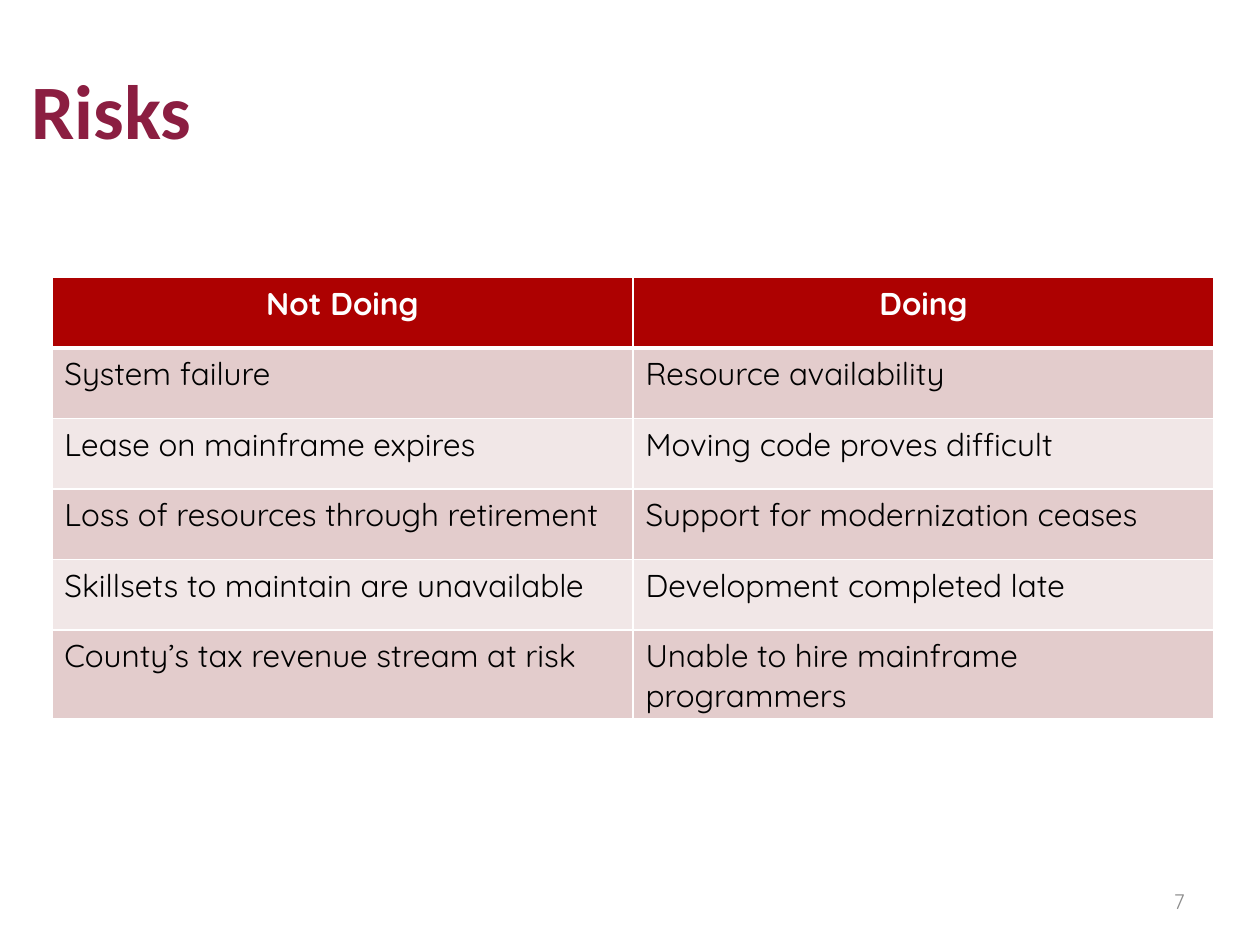
from dataclasses import dataclass

from lxml.etree import SubElement
from pptx import Presentation
from pptx.dml.color import RGBColor as Color
from pptx.enum.text import MSO_ANCHOR as Anchor, PP_ALIGN as Align
from pptx.oxml.ns import qn
from pptx.util import Pt


@dataclass(frozen=True)
class Theme:
    title: str = "8B1E41"
    header: str = "AD0101"
    bands: tuple = ("E3CCCC", "F1E7E7")
    white: str = "FFFFFF"
    black: str = "000000"
    muted: str = "8C8C8C"
    title_font: str = "Calibri"
    body_font: str = "Quicksand"
    title_size: int = 44
    body_size: int = 18
    number_size: int = 12


THEME = Theme()

RISKS = [
    ("Not Doing", "Doing"),
    ("System failure", "Resource availability"),
    ("Lease on mainframe expires", "Moving code proves difficult"),
    ("Loss of resources through retirement", "Support for modernization ceases"),
    ("Skillsets to maintain are unavailable", "Development completed late"),
    ("County’s tax revenue stream at risk", "Unable to hire mainframe programmers"),
]


def style_paragraph(paragraph, font_name, size, color, bold=False, align=Align.LEFT):
    paragraph.alignment = align
    font = paragraph.font
    font.name = font_name
    font.size = Pt(size)
    font.bold = bold
    font.color.rgb = Color.from_string(color)


def add_text(slide, box, text, anchor, inset=None, **style):
    shape = slide.shapes.add_textbox(*map(Pt, box))
    frame = shape.text_frame
    frame.word_wrap = True
    frame.vertical_anchor = anchor
    if inset is not None:
        frame.margin_left = frame.margin_right = Pt(inset)
        frame.margin_top = frame.margin_bottom = Pt(inset)
    frame.text = text
    style_paragraph(frame.paragraphs[0], **style)


def set_borders(cell, **widths):
    properties = cell._tc.get_or_add_tcPr()
    for side in "LRTB":
        width = Pt(widths.get(side, 1))
        line = SubElement(properties, qn(f"a:ln{side}"), w=str(width))
        fill = SubElement(line, qn("a:solidFill"))
        SubElement(fill, qn("a:srgbClr"), val=THEME.white)


def fill_cell(cell, text, row):
    is_header = row == 0
    set_borders(cell, T=3 if row == 1 else 1, B=3 if is_header else 1)
    background = THEME.header if is_header else THEME.bands[(row - 1) % 2]
    cell.fill.solid()
    cell.fill.fore_color.rgb = Color.from_string(background)
    cell.text = text
    style_paragraph(
        cell.text_frame.paragraphs[0],
        font_name=THEME.body_font,
        size=THEME.body_size,
        color=THEME.white if is_header else THEME.black,
        bold=is_header,
        align=Align.CENTER if is_header else Align.LEFT,
    )


def add_risk_table(slide, left, top, column_width, row_height):
    columns = len(RISKS[0])
    table = slide.shapes.add_table(
        len(RISKS), columns, Pt(left), Pt(top),
        Pt(column_width * columns), Pt(row_height * len(RISKS)),
    ).table
    for row, texts in enumerate(RISKS):
        for column, text in enumerate(texts):
            fill_cell(table.cell(row, column), text, row)


def main():
    presentation = Presentation()
    presentation.slide_width = Pt(720)
    presentation.slide_height = Pt(540)
    slide = presentation.slides.add_slide(presentation.slide_layouts[6])

    add_text(slide, (18, 36, 648, 54), "Risks", Anchor.TOP, inset=0,
             font_name=THEME.title_font, size=THEME.title_size,
             color=THEME.title, bold=True)
    add_risk_table(slide, left=29.6, top=158.6, column_width=332.1, row_height=40.3)
    add_text(slide, (516, 500.5, 168, 28.75), "7", Anchor.MIDDLE,
             font_name=THEME.body_font, size=THEME.number_size,
             color=THEME.muted, align=Align.RIGHT)

    presentation.save("out.pptx")


if __name__ == "__main__":
    main()
